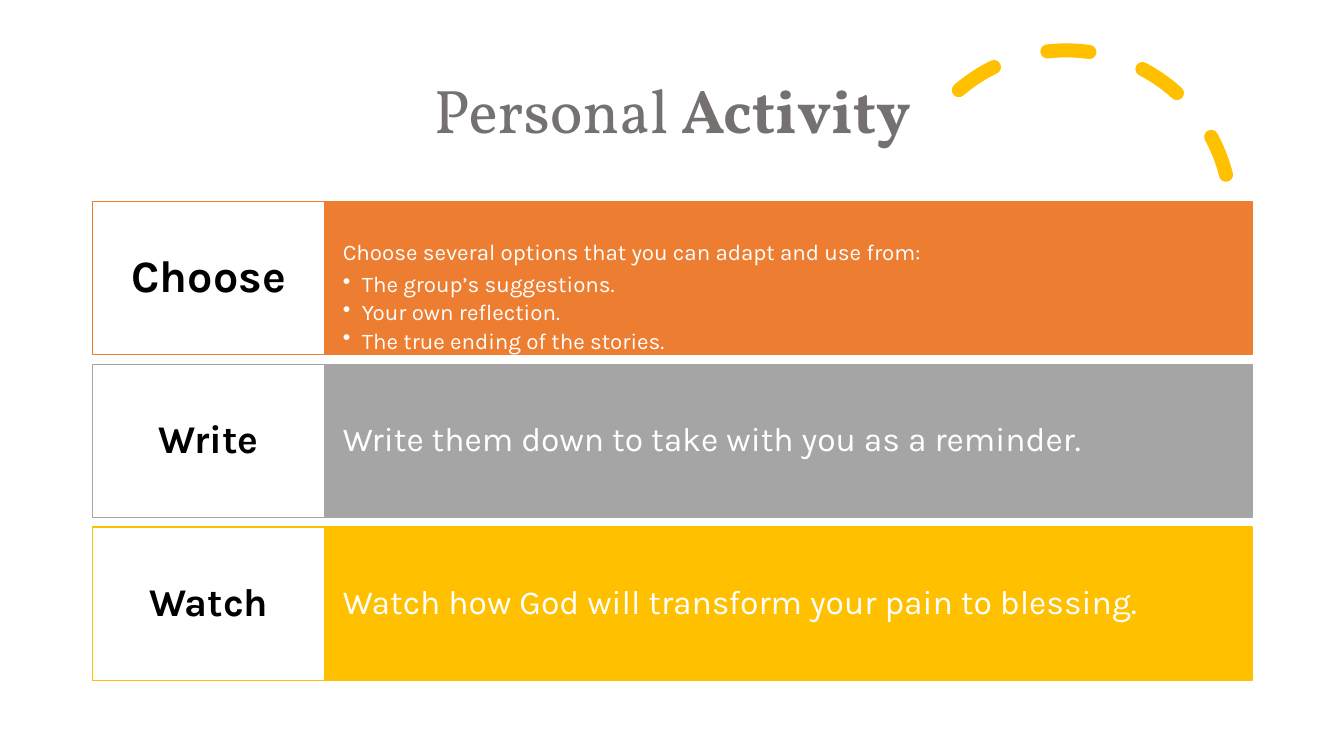
from dataclasses import dataclass

from lxml import etree
from pptx import Presentation
from pptx.dml.color import RGBColor
from pptx.enum.dml import MSO_LINE
from pptx.enum.shapes import MSO_SHAPE
from pptx.enum.text import MSO_ANCHOR, PP_ALIGN
from pptx.oxml.ns import qn
from pptx.util import Inches, Pt

ARC, RECT = MSO_SHAPE.ARC, MSO_SHAPE.RECTANGLE
DASH = MSO_LINE.DASH
TOP, MIDDLE = MSO_ANCHOR.TOP, MSO_ANCHOR.MIDDLE
LEFT, CENTER = PP_ALIGN.LEFT, PP_ALIGN.CENTER

WHITE = RGBColor(0xFF, 0xFF, 0xFF)
BLACK = RGBColor(0x00, 0x00, 0x00)
GREY = RGBColor(0x76, 0x71, 0x71)
ORANGE = RGBColor(0xED, 0x7D, 0x31)
SILVER = RGBColor(0xA5, 0xA5, 0xA5)
GOLD = RGBColor(0xFF, 0xC0, 0x00)

HEAD_FONT, BODY_FONT = "Vollkorn", "Karla"

# Row grid, in inches
LABEL_X, LABEL_W = 0.92, 2.3
BODY_X, BODY_W = LABEL_X + LABEL_W, 9.2
ROW_Y, ROW_H, STEP = 2.0, 1.52, 1.615


@dataclass
class Step:
    label: str
    label_size: int
    text: str
    size: int
    color: RGBColor
    bullets: tuple[str, ...] = ()


STEPS = [
    Step("Choose", 32, "Choose several options that you can adapt and use from:",
         16, ORANGE,
         ("The group’s suggestions.", "Your own reflection.",
          "The true ending of the stories.")),
    Step("Write", 28, "Write them down to take with you as a reminder.",
         24, SILVER),
    Step("Watch", 28, "Watch how God will transform your pain to blessing.",
         24, GOLD),
]


def style(para, font: str, size: int, color: RGBColor, align, bold=False) -> None:
    para.alignment = align
    para.line_spacing = 0.9
    para.font.name = font
    para.font.size = Pt(size)
    para.font.color.rgb = color
    para.font.bold = bold


def add_bullet(para) -> None:
    props = para._p.get_or_add_pPr()
    props.set("marL", str(Inches(0.19)))
    props.set("indent", str(-Inches(0.19)))
    etree.SubElement(props, qn("a:buChar")).set("char", "•")


def add_box(slide, x: float, y: float, w: float, fill: RGBColor, edge: RGBColor,
            pad_x: float, pad_y: float, anchor):
    box = slide.shapes.add_shape(
        RECT, Inches(x), Inches(y), Inches(w), Inches(ROW_H))
    box.shadow.inherit = False
    box.fill.solid()
    box.fill.fore_color.rgb = fill
    box.line.color.rgb = edge
    box.line.width = Pt(1)
    frame = box.text_frame
    frame.word_wrap = True
    frame.vertical_anchor = anchor
    frame.margin_left = frame.margin_right = Inches(pad_x)
    frame.margin_top = frame.margin_bottom = Inches(pad_y)
    return frame


def add_step(slide, step: Step, y: float) -> None:
    # Coloured body
    anchor = TOP if step.bullets else MIDDLE
    frame = add_box(slide, BODY_X, y, BODY_W, step.color, step.color,
                    0.18, 0.39, anchor)
    para = frame.paragraphs[0]
    para.text = step.text
    para.space_after = Pt(6)
    style(para, BODY_FONT, step.size, WHITE, LEFT)
    for text in step.bullets:
        para = frame.add_paragraph()
        para.text = text
        para.level = 1
        para.space_after = Pt(2.8)
        para.line_spacing = 0.9
        add_bullet(para)
        style(para, BODY_FONT, step.size, WHITE, LEFT)

    # White label
    frame = add_box(slide, LABEL_X, y, LABEL_W, WHITE, step.color,
                    0.12, 0.15, MIDDLE)
    para = frame.paragraphs[0]
    para.text = step.label
    style(para, BODY_FONT, step.label_size, BLACK, CENTER, bold=True)


def add_arc(slide) -> None:
    arc = slide.shapes.add_shape(
        ARC, Inches(8.94), Inches(0.5), Inches(3.27), Inches(3.27))
    arc.shadow.inherit = False
    arc.rotation = 345.8
    arc.adjustments[0] = 146.13
    arc.adjustments[1] = 0
    arc.fill.background()
    arc.line.color.rgb = GOLD
    arc.line.width = Pt(10)
    arc.line.dash_style = DASH
    arc._element.spPr.find(qn("a:ln")).set("cap", "rnd")


def add_title(slide) -> None:
    title = slide.shapes.title
    title.left, title.top = Inches(0.92), Inches(0.4)
    title.width, title.height = Inches(11.5), Inches(1.45)
    title.text_frame.vertical_anchor = MIDDLE
    para = title.text_frame.paragraphs[0]
    para.add_run().text = "Personal "
    strong = para.add_run()
    strong.text = "Activity"
    strong.font.bold = True
    style(para, HEAD_FONT, 44, GREY, CENTER)


def main() -> None:
    deck = Presentation()
    deck.slide_width, deck.slide_height = Inches(13.33), Inches(7.5)
    slide = deck.slides.add_slide(deck.slide_layouts[5])
    add_arc(slide)
    add_title(slide)
    for i, step in enumerate(STEPS):
        add_step(slide, step, ROW_Y + i * STEP)
    deck.save("out.pptx")


if __name__ == "__main__":
    main()
